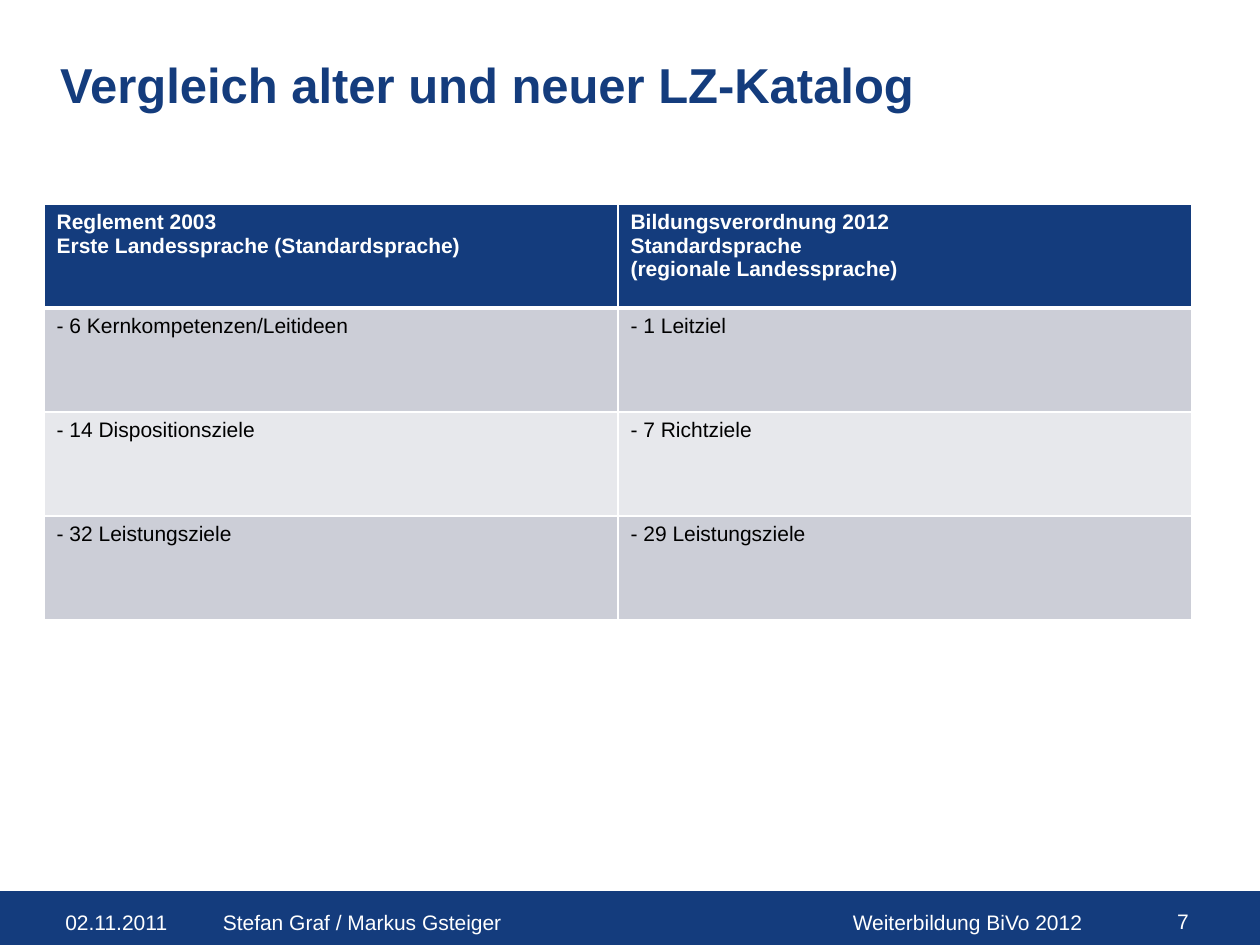
from copy import deepcopy
from dataclasses import dataclass

from lxml import etree
from pptx import Presentation
from pptx import util as u
from pptx.dml.color import RGBColor
from pptx.enum import shapes, text
from pptx.oxml import ns


@dataclass(frozen=True)
class Theme:
    font: str = "Arial"
    blue: str = "143C7D"
    white: str = "FFFFFF"
    black: str = "000000"
    bands: tuple = ("CCCED7", "E7E8EC")
    title_size: int = 28
    body_size: int = 12
    thin_border: int = 1
    thick_border: int = 3


THEME = Theme()

ROWS = [
    ("Reglement 2003\nErste Landessprache (Standardsprache)",
     "Bildungsverordnung 2012\nStandardsprache\n(regionale Landessprache)"),
    ("- 6 Kernkompetenzen/Leitideen", "- 1 Leitziel"),
    ("- 14 Dispositionsziele", "- 7 Richtziele"),
    ("- 32 Leistungsziele", "- 29 Leistungsziele"),
]

FOOTER = [
    ("02.11.2011", (0.42, 7.17, 1.08, 0.32), text.PP_ALIGN.LEFT),
    ("Weiterbildung BiVo 2012", (6.67, 7.17, 2.33, 0.33), text.PP_ALIGN.LEFT),
    ("7 ", (9, 7.16, 0.58, 0.34), text.PP_ALIGN.RIGHT),
    ("Stefan Graf / Markus Gsteiger", (1.67, 7.17, 4.12, 0.32), text.PP_ALIGN.LEFT),
]


def inches(values):
    return [u.Inches(value) for value in values]


def write(frame, wording, size, color, bold=False, align=text.PP_ALIGN.LEFT):
    para = frame.paragraphs[0]
    para.text = wording
    para.alignment = align
    formats = {"name": THEME.font, "size": u.Pt(size), "bold": bold}
    for span in para.runs:
        for key, value in formats.items():
            setattr(span.font, key, value)
        span.font.color.rgb = RGBColor.from_string(color)
    for line_break in para._p.findall(ns.qn("a:br")):
        line_break.append(deepcopy(para.runs[0]._r.rPr))


def add_text(page, wording, place, size, color, **formats):
    box = page.shapes.add_textbox(*inches(place))
    box.text_frame.word_wrap = True
    write(box.text_frame, wording, size, color, **formats)


def add_bar(page, place, color):
    bar = page.shapes.add_shape(shapes.MSO_SHAPE.RECTANGLE, *inches(place))
    bar.shadow.inherit = False
    bar.fill.solid()
    bar.fill.fore_color.rgb = RGBColor.from_string(color)
    bar.line.color.rgb = RGBColor.from_string(color)
    bar.line.width = u.Pt(0.75)


def set_borders(cell, widths):
    properties = cell._tc.get_or_add_tcPr()
    for side, width in widths.items():
        line = etree.SubElement(properties, ns.qn(f"a:ln{side}"), w=str(u.Pt(width)))
        fill = etree.SubElement(line, ns.qn("a:solidFill"))
        etree.SubElement(fill, ns.qn("a:srgbClr"), val=THEME.white)


def style_cell(cell, wording, row):
    header = row == 0
    thin, thick = THEME.thin_border, THEME.thick_border
    set_borders(cell, {
        "L": thin,
        "R": thin,
        "T": thick if row == 1 else thin,
        "B": thick if header else thin,
    })
    background = THEME.blue if header else THEME.bands[(row - 1) % 2]
    cell.fill.solid()
    cell.fill.fore_color.rgb = RGBColor.from_string(background)
    color = THEME.white if header else THEME.black
    write(cell.text_frame, wording, THEME.body_size, color, bold=header)


def add_comparison(page, rows, place):
    table = page.shapes.add_table(len(rows), len(rows[0]), *inches(place)).table
    for row, wordings in enumerate(rows):
        for column, wording in enumerate(wordings):
            style_cell(table.cell(row, column), wording, row)


def main():
    deck = Presentation()
    deck.slide_width, deck.slide_height = inches((10, 7.5))
    page = deck.slides.add_slide(deck.slide_layouts[6])
    add_bar(page, (-0.04, 7.08, 10.04, 0.42), THEME.blue)
    for wording, place, align in FOOTER:
        add_text(page, wording, place, THEME.body_size, THEME.white, align=align)
    add_text(page, "Vergleich alter und neuer LZ-Katalog", (0.38, 0.38, 7.3, 0.93),
             THEME.title_size, THEME.blue, bold=True)
    add_comparison(page, ROWS, (0.35, 1.62, 9.11, 3.3))
    deck.save("out.pptx")


if __name__ == "__main__":
    main()
